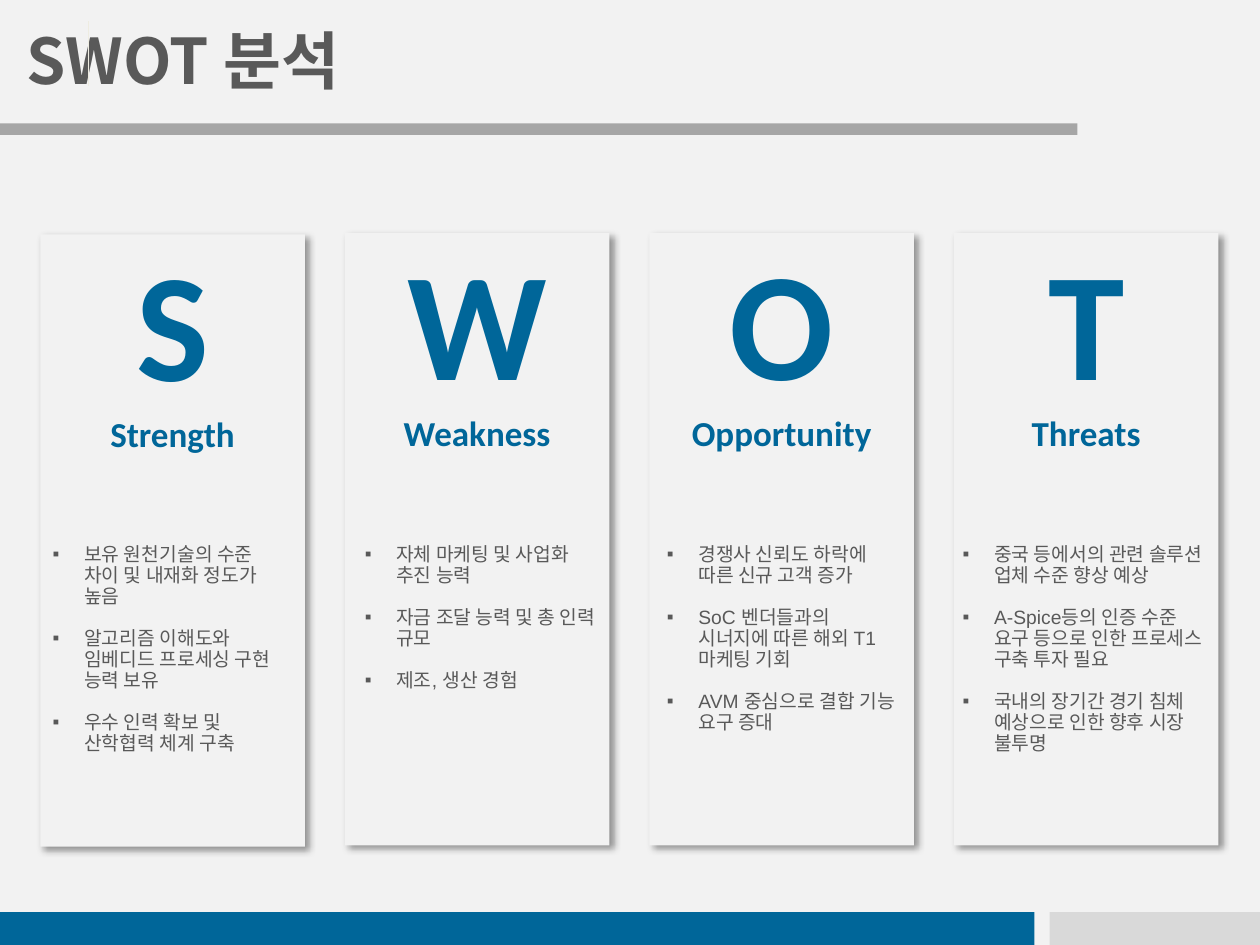
from dataclasses import dataclass

from lxml import etree
from pptx import Presentation
from pptx.dml.color import RGBColor
from pptx.enum.shapes import MSO_CONNECTOR, MSO_SHAPE
from pptx.enum.text import MSO_ANCHOR, MSO_AUTO_SIZE, PP_ALIGN
from pptx.oxml.ns import qn
from pptx.util import Inches, Pt

RECTANGLE = MSO_SHAPE.RECTANGLE
STRAIGHT = MSO_CONNECTOR.STRAIGHT
CENTER, LEFT = PP_ALIGN.CENTER, PP_ALIGN.LEFT
MIDDLE = MSO_ANCHOR.MIDDLE
NO_FIT = MSO_AUTO_SIZE.NONE
TITLE_ONLY = 5


@dataclass(frozen=True)
class Theme:
    paper: str = "F2F2F2"
    accent: str = "006699"
    text: str = "595959"
    rule: str = "A6A6A6"
    pale: str = "D9D9D9"
    tick: str = "EEECE1"
    shadow: str = "000000"
    title_font: str = "Noto Sans CJK KR"
    heading_font: str = "Calibri"
    body_font: str = "Arial"
    title_size: int = 36
    letter_size: int = 88
    heading_size: int = 20
    body_size: int = 11
    body_leading: int = 12


THEME = Theme()


@dataclass(frozen=True)
class Area:
    column: float
    row: float
    columns: float
    rows: float

    def box(self) -> tuple:
        return tuple(grid(cells) for cells in (self.column, self.row, self.columns, self.rows))


@dataclass(frozen=True)
class Bar:
    area: Area
    color: str


@dataclass(frozen=True)
class Card:
    letter: str
    heading: str
    heading_columns: float
    body_shift: float
    body_columns: float
    points: tuple
    drop: float = 0


GRID_COLUMNS, GRID_ROWS = 100, 75
CELL = Inches(10) / GRID_COLUMNS
CARD_LEFT, CARD_TOP, CARD_PITCH = 3.2, 18.5, 24.17
CARD_COLUMNS, CARD_ROWS = 21, 48.6
BODY_TOP, BODY_ROWS = 42.7, 17.8
HEADING_RISE, HEADING_ROWS = 1, 19.2

BARS = (
    Bar(Area(0, 9.8, 85.5, 0.9), THEME.rule),
    Bar(Area(83.3, 72.4, 16.7, 2.6), THEME.pale),
    Bar(Area(0, 72.4, 82.1, 2.6), THEME.accent),
)
CARDS = (
    Card("S", "Strength", 12.6, 0, 20.6, (
        "보유 원천기술의 수준 차이 및 내재화 정도가 높음",
        "알고리즘 이해도와 임베디드 프로세싱 구현 능력 보유",
        "우수 인력 확보 및 산학협력 체계 구축"), drop=0.1),
    Card("W", "Weakness", 15, 0.6, 20.6, (
        "자체 마케팅 및 사업화 추진 능력",
        "자금 조달 능력 및 총 인력 규모",
        "제조, 생산 경험")),
    Card("O", "Opportunity", 19.2, 0.4, 20.8, (
        "경쟁사 신뢰도 하락에 따른 신규 고객 증가",
        "SoC 벤더들과의 시너지에 따른 해외 T1마케팅 기회",
        "AVM 중심으로 결합 기능 요구 증대")),
    Card("T", "Threats", 12.6, -0.3, 21.8, (
        "중국 등에서의 관련 솔루션 업체 수준 향상 예상",
        "A-Spice등의 인증 수준 요구 등으로 인한 프로세스 구축 투자 필요",
        "국내의 장기간 경기 침체 예상으로 인한 향후 시장 불투명")),
)


def grid(cells: float) -> int:
    return round(cells * CELL)


def set_font(para, name: str, size: int, color: str, bold: bool = False) -> None:
    font = para.font
    font.name, font.size, font.bold = name, Pt(size), bold
    font.color.rgb = RGBColor.from_string(color)


def add_bar(page, bar: Bar):
    shape = page.shapes.add_shape(RECTANGLE, *bar.area.box())
    shape.shadow.inherit = False
    shape.fill.solid()
    shape.fill.fore_color.rgb = RGBColor.from_string(bar.color)
    shape.line.fill.background()
    return shape


def add_shadow(shape) -> None:
    effects = shape._element.spPr.find(qn("a:effectLst"))
    outer = etree.SubElement(effects, qn("a:outerShdw"), blurRad=str(Pt(4)),
                             dist=str(Pt(3)), dir="2700000", algn="tl", rotWithShape="0")
    color = etree.SubElement(outer, qn("a:srgbClr"), val=THEME.shadow)
    etree.SubElement(color, qn("a:alpha"), val="40000")


def add_lines(page, area: Area, lines: tuple) -> list:
    frame = page.shapes.add_textbox(*area.box()).text_frame
    frame.word_wrap = True
    frame.text = "\n".join(lines)
    return list(frame.paragraphs)


def add_bullet(para) -> None:
    properties = para._p.get_or_add_pPr()
    properties.set("marL", str(Inches(0.25)))
    properties.set("indent", str(-Inches(0.25)))
    etree.SubElement(properties, qn("a:buFont"), typeface=THEME.body_font)
    etree.SubElement(properties, qn("a:buChar"), char="▪")


def add_card(page, index: int, card: Card) -> None:
    left = CARD_LEFT + index * CARD_PITCH
    top = CARD_TOP + card.drop
    add_shadow(add_bar(page, Bar(Area(left, top, CARD_COLUMNS, CARD_ROWS), THEME.paper)))

    heading_left = left + (CARD_COLUMNS - card.heading_columns) / 2
    heading_area = Area(heading_left, top - HEADING_RISE, card.heading_columns, HEADING_ROWS)
    heading = add_lines(page, heading_area, (card.letter, card.heading))
    for para, size in zip(heading, (THEME.letter_size, THEME.heading_size)):
        para.alignment = CENTER
        set_font(para, THEME.heading_font, size, THEME.accent, bold=True)

    body_area = Area(left + card.body_shift, BODY_TOP, card.body_columns, BODY_ROWS)
    body = add_lines(page, body_area, card.points)
    for para in body:
        add_bullet(para)
        para.line_spacing = Pt(THEME.body_leading)
        set_font(para, THEME.body_font, THEME.body_size, THEME.text)
    for para in body[:-1]:
        para.space_after = Pt(THEME.body_leading)


def add_title(page, text: str) -> None:
    title = page.shapes.title
    title.left, title.top, title.width, title.height = Area(0, -0.3, 100, 10).box()
    frame = title.text_frame
    frame.text = text
    frame.auto_size = NO_FIT
    frame.vertical_anchor = MIDDLE
    frame.margin_left = grid(2.1)
    para = frame.paragraphs[0]
    para.alignment = LEFT
    set_font(para, THEME.title_font, THEME.title_size, THEME.text, bold=True)
    etree.SubElement(para.font._element, qn("a:ea"), typeface=THEME.title_font)


def add_tick(page) -> None:
    tick = page.shapes.add_connector(STRAIGHT, grid(7), grid(1.7), grid(7), grid(6.8))
    tick.line.color.rgb = RGBColor.from_string(THEME.tick)
    tick.line.width = Pt(0.75)
    etree.SubElement(tick._element.spPr, qn("a:effectLst"))


def main() -> None:
    deck = Presentation()
    deck.slide_width, deck.slide_height = grid(GRID_COLUMNS), grid(GRID_ROWS)
    page = deck.slides.add_slide(deck.slide_layouts[TITLE_ONLY])
    page.background.fill.solid()
    page.background.fill.fore_color.rgb = RGBColor.from_string(THEME.paper)
    add_tick(page)
    for bar in BARS:
        add_bar(page, bar)
    add_title(page, "SWOT 분석")
    for index, card in enumerate(CARDS):
        add_card(page, index, card)
    deck.save("out.pptx")


if __name__ == "__main__":
    main()
